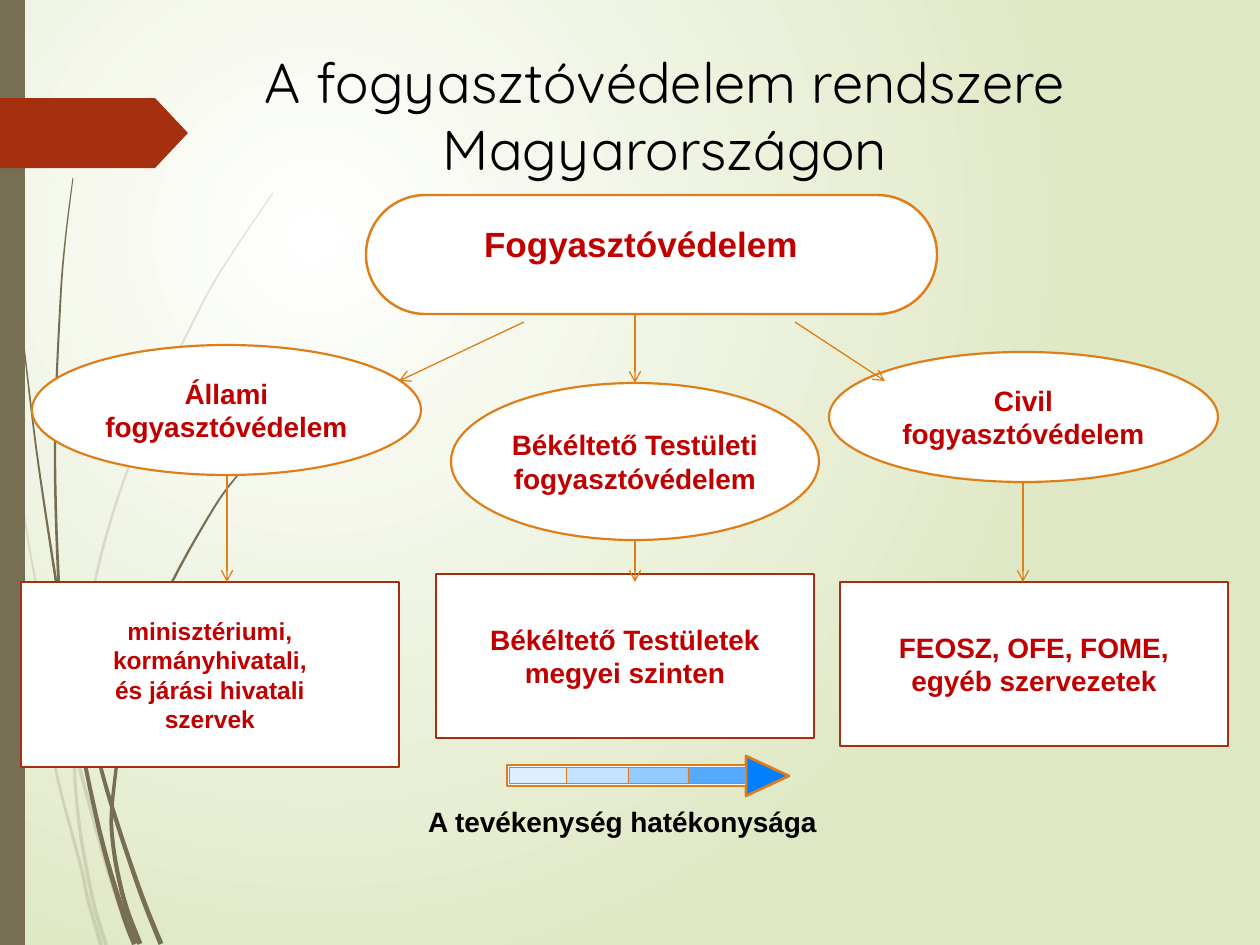
import math
from dataclasses import dataclass

import pptx
import pptx.dml.color
import pptx.enum.shapes
import pptx.enum.text
import pptx.oxml
import pptx.oxml.ns
import pptx.util

SHAPE = pptx.enum.shapes.MSO_SHAPE
ANCHOR = pptx.enum.text.MSO_ANCHOR
PX_PER_INCH = 126


@dataclass(frozen=True)
class Theme:
    white: str = "FFFFFF"
    black: str = "000000"
    meadow: str = "DFE8C4"
    stalk: str = "766F54"
    rust: str = "A53010"
    orange: str = "DE7E18"
    red: str = "C00000"
    arrow_head: str = "0080FF"
    arrow_bar: str = "F4FAFF"
    arrow_steps: tuple[str, ...] = ("DFEEFF", "C4E1FF", "95CAFF", "55AAFF")
    heading_font: str = "Quicksand"
    body_font: str = "Arial"
    title_size: int = 32
    root_size: int = 20
    body_size: int = 16
    small_size: int = 14


THEME = Theme()


@dataclass(frozen=True)
class Frame:
    left: int
    top: int
    width: int
    height: int


@dataclass(frozen=True)
class Node:
    lines: tuple[str, ...]
    frame: Frame
    kind: SHAPE = SHAPE.OVAL
    line: str = THEME.orange
    size: int = THEME.body_size


@dataclass(frozen=True)
class Blade:
    spine: tuple[tuple[int, int], ...]
    width: int
    opacity: int = 100


@dataclass(frozen=True)
class Arrow:
    start: tuple[int, int]
    end: tuple[int, int]


def emu(px: float) -> int:
    return round(px * 914400 / PX_PER_INCH)


def rgb(value: str) -> pptx.dml.color.RGBColor:
    return pptx.dml.color.RGBColor.from_string(value)


def child(parent, tag: str, **attributes):
    element = pptx.oxml.parse_xml(f"<a:{tag} {pptx.oxml.ns.nsdecls('a')}/>")
    for name, value in attributes.items():
        element.set(name, str(value))
    parent.append(element)
    return element


def paint(box, fill: str, line: str | None = None, weight: float = 1.25) -> None:
    box.shadow.inherit = False
    box.fill.solid()
    box.fill.fore_color.rgb = rgb(fill)
    if line is None:
        box.line.fill.background()
    else:
        box.line.color.rgb = rgb(line)
        box.line.width = pptx.util.Pt(weight)


def add_box(page, kind, frame: Frame, fill: str, line: str | None = None, weight: float = 1.25):
    box = page.shapes.add_shape(kind, emu(frame.left), emu(frame.top), emu(frame.width), emu(frame.height))
    paint(box, fill, line, weight)
    return box


def write(box, *lines: str, size: int, color: str, font: str = THEME.body_font,
          bold: bool = True, wrap: bool = False, anchor=ANCHOR.MIDDLE, inset: bool = True) -> None:
    text = box.text_frame
    text.word_wrap = wrap
    text.vertical_anchor = anchor
    if not inset:
        text.margin_left = text.margin_right = text.margin_top = text.margin_bottom = 0
    for index, line in enumerate(lines):
        para = text.add_paragraph() if index else text.paragraphs[0]
        para.alignment = pptx.enum.text.PP_ALIGN.CENTER
        span = para.add_run()
        span.text = line
        span.font.name = font
        span.font.size = pptx.util.Pt(size)
        span.font.bold = bold
        span.font.color.rgb = rgb(color)


def add_label(page, frame: Frame, *lines: str, **style):
    box = page.shapes.add_textbox(emu(frame.left), emu(frame.top), emu(frame.width), emu(frame.height))
    write(box, *lines, **style)


def add_polygon(page, points, fill: str, line: str | None = None, weight: float = 1.25):
    corners = [(emu(x), emu(y)) for x, y in points]
    builder = page.shapes.build_freeform(*corners[0])
    builder.add_line_segments(corners[1:], close=True)
    box = builder.convert_to_shape()
    paint(box, fill, line, weight)
    return box


def smooth(points, steps: int = 6) -> list[tuple[float, float]]:
    """Run a Catmull-Rom curve through the points."""
    padded = [points[0], *points, points[-1]]
    curve = []
    for a, b, c, d in zip(padded, padded[1:], padded[2:], padded[3:]):
        for step in range(steps):
            t = step / steps
            curve.append(tuple(
                b[i] + t * (c[i] - a[i]) / 2
                + t ** 2 * (2 * a[i] - 5 * b[i] + 4 * c[i] - d[i]) / 2
                + t ** 3 * (3 * b[i] - a[i] - 3 * c[i] + d[i]) / 2
                for i in (0, 1)))
    return [*curve, points[-1]]


def add_blade(page, blade: Blade) -> None:
    curve = smooth(blade.spine)
    left, right = [], []
    for index, (x, y) in enumerate(curve):
        before, after = curve[max(index - 1, 0)], curve[min(index + 1, len(curve) - 1)]
        dx, dy = after[0] - before[0], after[1] - before[1]
        half = (1 + (blade.width - 1) * index / (len(curve) - 1)) / 2 / math.hypot(dx, dy)
        left.append((x - dy * half, y + dx * half))
        right.append((x + dy * half, y - dx * half))
    box = add_polygon(page, left + right[::-1], THEME.stalk)
    if blade.opacity < 100:
        color = box.fill._xPr.find(".//" + pptx.oxml.ns.qn("a:srgbClr"))
        child(color, "alpha", val=blade.opacity * 1000)


def add_arrow(page, arrow: Arrow):
    connector = page.shapes.add_connector(
        pptx.enum.shapes.MSO_CONNECTOR.STRAIGHT, *map(emu, arrow.start + arrow.end))
    connector.line.color.rgb = rgb(THEME.orange)
    connector.line.width = pptx.util.Pt(0.75)
    child(connector.line._get_or_add_ln(), "tailEnd", type="arrow")
    child(connector._element.spPr, "effectLst")
    return connector


def paint_background(page) -> None:
    fill = page.background.fill
    fill.gradient()
    for stop, color in zip(fill.gradient_stops, (THEME.white, THEME.meadow)):
        stop.color.rgb = rgb(color)
    gradient = page.background._cSld.find(".//" + pptx.oxml.ns.qn("a:gradFill"))
    gradient.remove(gradient.find(pptx.oxml.ns.qn("a:lin")))
    circle = child(gradient, "path", path="circle")
    child(circle, "fillToRect", l=50000, t=50000, r=100000, b=100000)


BLADES = (
    Blade(((10, 441), (17, 498), (26, 592), (42, 695), (58, 780), (81, 867), (88, 900), (101, 945)), 4, 20),
    Blade(((13, 441), (31, 557), (52, 656), (74, 747), (109, 873), (134, 945)), 5, 20),
    Blade(((273, 193), (235, 249), (200, 308), (139, 439), (95, 581), (76, 736), (78, 814), (92, 896),
           (106, 945)), 4, 20),
    Blade(((18, 293), (36, 447), (58, 595), (73, 701), (99, 829), (122, 910), (135, 944)), 6),
    Blade(((73, 178), (65, 243), (60, 309), (55, 440), (58, 567), (64, 617), (95, 745), (113, 810),
           (140, 891), (161, 944)), 5),
    Blade(((272, 433), (241, 471), (212, 511), (164, 599), (129, 695), (113, 796), (113, 844),
           (124, 900), (140, 944)), 5),
)
CONCILIATION = Node(("Békéltető Testületi", "fogyasztóvédelem"), Frame(451, 383, 368, 157))
NODES = (
    Node(("Állami", "fogyasztóvédelem"), Frame(32, 345, 389, 130)),
    CONCILIATION,
    Node(("Civil", "fogyasztóvédelem"), Frame(829, 352, 389, 130)),
    Node(("minisztériumi,", "kormányhivatali,", "és járási hivatali", "szervek"),
         Frame(21, 582, 378, 185), SHAPE.RECTANGLE, THEME.rust, THEME.small_size),
    Node(("Békéltető Testületek", "megyei szinten"), Frame(436, 574, 378, 164), SHAPE.RECTANGLE, THEME.rust),
    Node(("FEOSZ, OFE, FOME,", "egyéb szervezetek"), Frame(840, 582, 388, 164), SHAPE.RECTANGLE, THEME.rust),
)
TO_CONCILIATION = Arrow((635, 314), (635, 383))
ARROWS = (
    TO_CONCILIATION,
    Arrow((795, 322), (885, 381)),
    Arrow((524, 322), (399, 381)),
    Arrow((1023, 482), (1023, 582)),
    Arrow((635, 540), (635, 582)),
    Arrow((227, 475), (227, 582)),
)
STEP_EDGES = (509, 566, 628, 688, 746)


def main() -> None:
    deck = pptx.Presentation()
    deck.slide_width, deck.slide_height = emu(1260), emu(945)
    page = deck.slides.add_slide(deck.slide_layouts[6])

    # Backdrop: gradient, grass blades, side bar and tag
    paint_background(page)
    for blade in BLADES:
        add_blade(page, blade)
    add_box(page, SHAPE.RECTANGLE, Frame(0, 0, 25, 945), THEME.stalk)
    tag = add_box(page, SHAPE.PENTAGON, Frame(0, 98, 188, 70), THEME.rust)
    tag.adjustments[0] = 0.47

    # Title
    add_label(page, Frame(164, 40, 1002, 149), "A fogyasztóvédelem rendszere Magyarországon",
              size=THEME.title_size, color=THEME.black, font=THEME.heading_font, bold=False, wrap=True)

    # Branches and their bodies
    boxes = {}
    for node in NODES:
        boxes[node] = add_box(page, node.kind, node.frame, THEME.white, node.line)
        write(boxes[node], *node.lines, size=node.size, color=THEME.red)

    # Root of the tree
    root = add_box(page, SHAPE.ROUNDED_RECTANGLE, Frame(366, 195, 571, 119), THEME.white, THEME.orange, 1.39)
    root.adjustments[0] = 0.5
    add_label(page, Frame(448, 222, 386, 54), "Fogyasztóvédelem", size=THEME.root_size,
              color=THEME.red, anchor=ANCHOR.TOP, inset=False)

    # Effectiveness arrow
    add_label(page, Frame(348, 805, 549, 34), "A tevékenység hatékonysága", size=THEME.body_size,
              color=THEME.black, wrap=True, anchor=ANCHOR.TOP, inset=False)
    add_polygon(page, ((746, 796), (746, 756), (789, 776)), THEME.arrow_head, THEME.orange, 1.5)
    add_box(page, SHAPE.RECTANGLE, Frame(507, 765, 239, 21), THEME.arrow_bar, THEME.orange, 1.5)
    for left, right, color in zip(STEP_EDGES, STEP_EDGES[1:], THEME.arrow_steps):
        add_box(page, SHAPE.RECTANGLE, Frame(left, 767, right - left, 16), color, THEME.orange, 0.25)

    # Arrows between the levels
    for arrow in ARROWS:
        connector = add_arrow(page, arrow)
        if arrow is TO_CONCILIATION:
            connector.end_connect(boxes[CONCILIATION], 0)

    deck.save("out.pptx")


if __name__ == "__main__":
    main()
